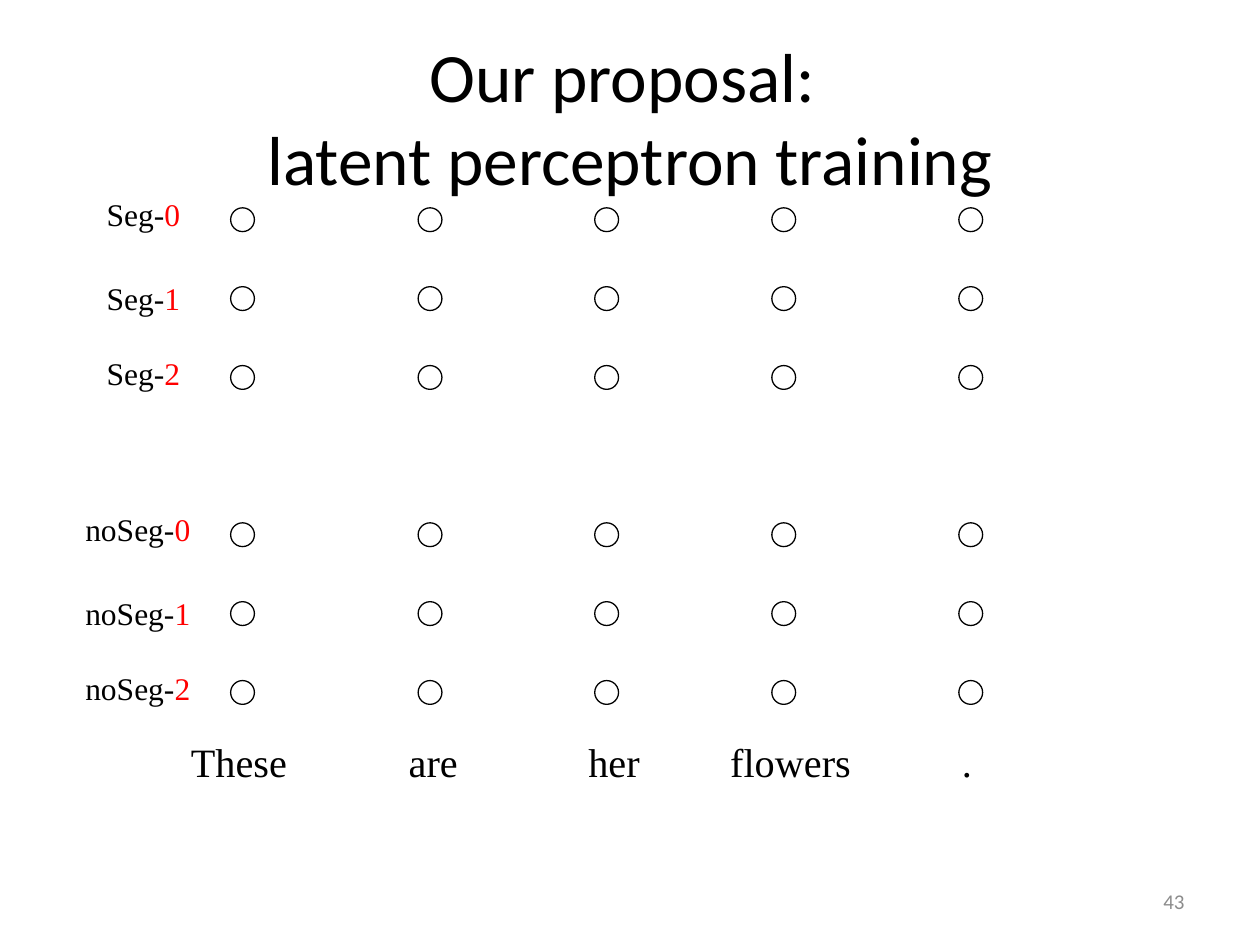
from dataclasses import dataclass

from lxml import etree
from pptx import Presentation
from pptx import util as u
from pptx.dml.color import RGBColor
from pptx.enum import shapes, text
from pptx.oxml.ns import qn


@dataclass(frozen=True)
class Theme:
    ink: str = "000000"
    paper: str = "FFFFFF"
    mark: str = "FF0000"
    faint: str = "8C8C8C"
    sans: str = "Calibri"
    serif: str = "Times New Roman"
    title: float = 39.6
    lead: float = 27
    word: float = 23
    label: float = 18
    small: float = 12
    line: float = 0.75


T = Theme()
COLS = [4.65, 8.43, 11.99, 15.56, 19.33]
TABS = [2.13, 6.52, 10.14, 13.0, 17.67]
WORDS = ["These", "are", "her", "flowers", "."]
DROPS = [0, 1.7, 3.2]
PITCH = 1.59
DOT = 0.48


def put(slide, box, *runs, font=T.serif, size=T.label, color=T.ink,
        align=text.PP_ALIGN.LEFT, anchor=text.MSO_ANCHOR.TOP, wrap=True):
    area = slide.shapes.add_textbox(*map(u.Cm, box))
    frame = area.text_frame
    frame.word_wrap = wrap
    frame.vertical_anchor = anchor
    para = frame.paragraphs[0]
    para.alignment = align
    for words, style in runs:
        for i, line in enumerate(words.split("\n")):
            if i:
                para.add_line_break()
            run = para.add_run()
            run.text = line
            run.font.name = font
            run.font.size = u.Pt(style.get("size", size))
            run.font.color.rgb = RGBColor.from_string(style.get("color", color))
    return para


def title(slide, box):
    put(slide, box, ("Our proposal: \nlatent perceptron training", {}),
        font=T.sans, size=T.title, align=text.PP_ALIGN.CENTER,
        anchor=text.MSO_ANCHOR.MIDDLE)


def dot(slide, left, top):
    oval = slide.shapes.add_shape(
        shapes.MSO_SHAPE.OVAL, *map(u.Cm, (left, top, DOT, DOT)))
    oval.shadow.inherit = False
    oval.fill.solid()
    oval.fill.fore_color.rgb = RGBColor.from_string(T.paper)
    oval.line.color.rgb = RGBColor.from_string(T.ink)
    oval.line.width = u.Pt(T.line)


def states(slide, name, box):
    left, top, width, height = box
    for i, drop in enumerate(DROPS):
        for col in COLS:
            dot(slide, col, top + 0.38 + i * PITCH)
        put(slide, (left, top + drop, width, height),
            (name + "-", {}), (str(i), {"color": T.mark}), wrap=False)


def words(slide, box):
    para = put(slide, box, ("\t", {"size": T.lead}),
               ("\t".join(WORDS), {}), size=T.word)
    stops = etree.SubElement(para._p.get_or_add_pPr(), qn("a:tabLst"))
    for stop in TABS:
        etree.SubElement(stops, qn("a:tab"), pos=str(u.Cm(stop)), algn="l")


def number(slide, box):
    put(slide, box, ("43", {}), font=T.sans, size=T.small, color=T.faint,
        align=text.PP_ALIGN.RIGHT, anchor=text.MSO_ANCHOR.MIDDLE)


def main():
    deck = Presentation()
    deck.slide_width, deck.slide_height = u.Cm(25.4), u.Cm(19.05)
    slide = deck.slides.add_slide(deck.slide_layouts[6])
    states(slide, "Seg", (1.9, 3.81, 2.1, 1.02))
    states(slide, "noSeg", (1.47, 10.16, 2.74, 1.02))
    words(slide, (1.47, 14.6, 19.89, 1.42))
    title(slide, (1.27, 0.76, 22.86, 3.18))
    number(slide, (18.2, 17.65, 5.93, 1.02))
    deck.save("out.pptx")


if __name__ == "__main__":
    main()
